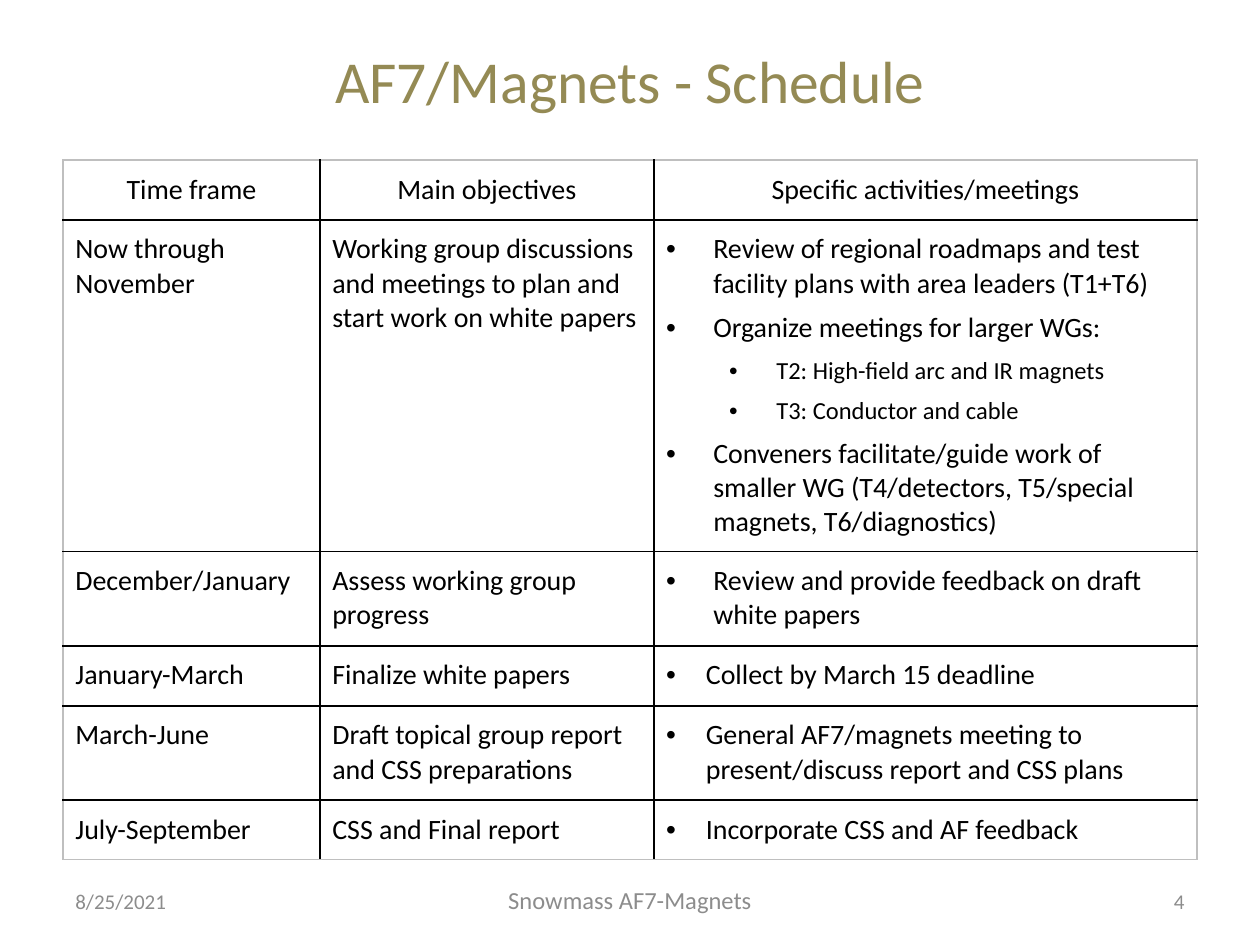
"""Build the AF7/Magnets schedule slide."""
from dataclasses import dataclass

import lxml.etree
import pptx
import pptx.dml.color
import pptx.enum.text
import pptx.oxml.ns
import pptx.util

Cm = pptx.util.Cm
Pt = pptx.util.Pt
Align = pptx.enum.text.PP_ALIGN
Anchor = pptx.enum.text.MSO_ANCHOR
qn = pptx.oxml.ns.qn

FONT = "Calibri"
BLACK = pptx.dml.color.RGBColor(0x00, 0x00, 0x00)
OLIVE = pptx.dml.color.RGBColor(0x94, 0x8A, 0x54)
GREY = pptx.dml.color.RGBColor(0x8C, 0x8C, 0x8C)
FRAME_GREY = pptx.dml.color.RGBColor(0xBF, 0xBF, 0xBF)

COLUMN_WIDTHS = (5.18, 6.73, 10.95)
ROW_HEIGHTS = (1.2, 6.69, 1.9, 1.21, 1.9, 1.2)
CELL_MARGIN = Cm(0.25)


@dataclass(frozen=True)
class Label:
    text: str
    left: float
    top: float
    width: float
    height: float
    size: float
    color: pptx.dml.color.RGBColor
    align: Align


@dataclass(frozen=True)
class Entry:
    text: str
    indent: float = 0
    hanging: float = 0
    after: float = 0
    size: float = 16
    level: int = 0
    align: Align = Align.LEFT


def heading(text: str) -> Entry:
    return Entry(text, align=Align.CENTER)


def activity(text: str) -> Entry:
    return Entry(text, indent=0.95, hanging=0.95, after=6)


def topic(text: str) -> Entry:
    return Entry(text, indent=2.22, hanging=0.95, after=6, size=14, level=1)


def milestone(text: str) -> Entry:
    return Entry(text, indent=0.8, hanging=0.8)


LABELS = (
    Label("AF7/Magnets - Schedule", 0, 0.46, 25.4, 2.31, 34, OLIVE, Align.CENTER),
    Label("8/25/2021", 1.27, 17.65, 5.93, 1.02, 12, GREY, Align.LEFT),
    Label("4", 18.2, 17.65, 5.93, 1.02, 12, GREY, Align.RIGHT),
    Label("Snowmass AF7-Magnets", 0.34, 17.63, 24.72, 1.02, 14, GREY, Align.CENTER),
)

SCHEDULE = (
    (
        [heading("Time frame")],
        [heading("Main objectives")],
        [heading("Specific activities/meetings")],
    ),
    (
        [Entry("Now through November")],
        [Entry("Working group discussions and meetings to plan and start work on white papers")],
        [
            activity("Review of regional roadmaps and test facility plans with area leaders (T1+T6)"),
            activity("Organize meetings for larger WGs:"),
            topic("T2: High-field arc and IR magnets"),
            topic("T3: Conductor and cable"),
            activity(
                "Conveners facilitate/guide work of smaller WG "
                "(T4/detectors, T5/special magnets, T6/diagnostics)"
            ),
        ],
    ),
    (
        [Entry("December/January")],
        [Entry("Assess working group progress", after=6)],
        [activity("Review and provide feedback on draft white papers")],
    ),
    (
        [Entry("January-March")],
        [Entry("Finalize white papers")],
        [milestone("Collect by March 15 deadline")],
    ),
    (
        [Entry("March-June")],
        [Entry("Draft topical group report and CSS preparations")],
        [milestone("General AF7/magnets meeting to present/discuss report and CSS plans")],
    ),
    (
        [Entry("July-September")],
        [Entry("CSS and Final report")],
        [milestone("Incorporate CSS and AF feedback")],
    ),
)


def style_paragraph(para, size: float, color, align: Align) -> None:
    para.alignment = align
    para.font.name = FONT
    para.font.size = Pt(size)
    para.font.color.rgb = color


def add_label(page, label: Label) -> None:
    box = page.shapes.add_textbox(
        Cm(label.left), Cm(label.top), Cm(label.width), Cm(label.height)
    )
    frame = box.text_frame
    frame.word_wrap = True
    frame.vertical_anchor = Anchor.MIDDLE
    para = frame.paragraphs[0]
    para.text = label.text
    style_paragraph(para, label.size, label.color, label.align)


def add_bullet(para, indent: float, hanging: float) -> None:
    properties = para._p.get_or_add_pPr()
    properties.set("marL", str(Cm(indent)))
    properties.set("indent", str(-Cm(hanging)))
    lxml.etree.SubElement(properties, qn("a:buFont")).set("typeface", "Arial")
    lxml.etree.SubElement(properties, qn("a:buChar")).set("char", "•")


def set_borders(cell, outer: dict[str, bool]) -> None:
    properties = cell._tc.get_or_add_tcPr()
    for position, (side, is_outer) in enumerate(outer.items()):
        line = lxml.etree.Element(qn(f"a:{side}"), w=str(Pt(1)))
        fill = lxml.etree.SubElement(line, qn("a:solidFill"))
        color = FRAME_GREY if is_outer else BLACK
        lxml.etree.SubElement(fill, qn("a:srgbClr")).set("val", str(color))
        properties.insert(position, line)


def fill_cell(cell, entries: list[Entry]) -> None:
    cell.fill.background()
    cell.margin_left = cell.margin_right = CELL_MARGIN
    cell.margin_top = cell.margin_bottom = CELL_MARGIN
    frame = cell.text_frame
    for number, entry in enumerate(entries):
        para = frame.add_paragraph() if number else frame.paragraphs[0]
        para.text = entry.text
        para.level = entry.level
        if entry.hanging:
            add_bullet(para, entry.indent, entry.hanging)
        para.space_after = Pt(entry.after)
        style_paragraph(para, entry.size, BLACK, entry.align)


def add_schedule(page) -> None:
    last_row, last_column = len(ROW_HEIGHTS) - 1, len(COLUMN_WIDTHS) - 1
    table = page.shapes.add_table(
        len(ROW_HEIGHTS), len(COLUMN_WIDTHS), Cm(1.27), Cm(3.23),
        Cm(sum(COLUMN_WIDTHS)), Cm(sum(ROW_HEIGHTS)),
    ).table
    table.first_row = table.horz_banding = False
    for column, width in zip(table.columns, COLUMN_WIDTHS):
        column.width = Cm(width)
    for row, height in zip(table.rows, ROW_HEIGHTS):
        row.height = Cm(height)
    for r, contents in enumerate(SCHEDULE):
        for c, entries in enumerate(contents):
            cell = table.cell(r, c)
            fill_cell(cell, entries)
            set_borders(cell, {
                "lnL": c == 0, "lnR": c == last_column,
                "lnT": r == 0, "lnB": r == last_row,
            })


def main() -> None:
    deck = pptx.Presentation()
    deck.slide_width, deck.slide_height = Cm(25.4), Cm(19.05)
    page = deck.slides.add_slide(deck.slide_layouts[6])
    for label in LABELS:
        add_label(page, label)
    add_schedule(page)
    deck.save("out.pptx")


if __name__ == "__main__":
    main()
